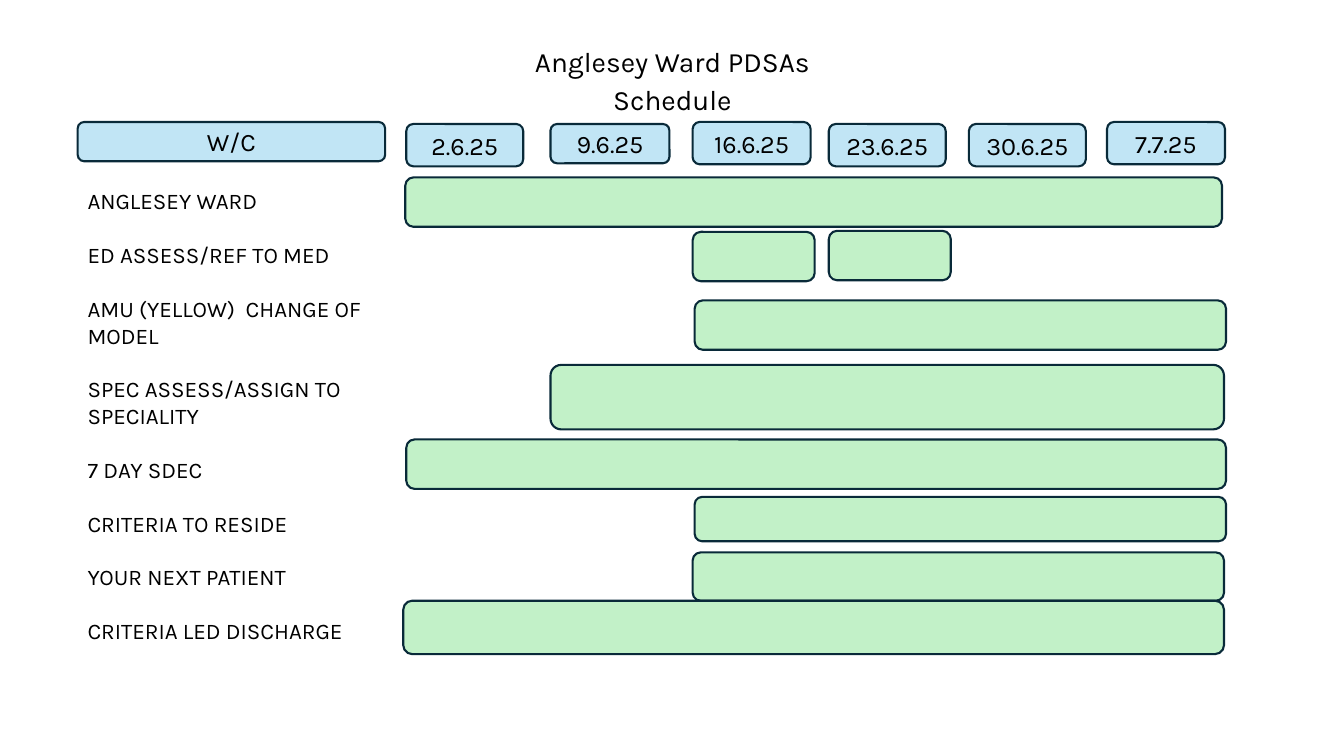
from pptx import Presentation
from pptx.dml.color import RGBColor as Rgb
from pptx.enum.shapes import MSO_SHAPE as Shape
from pptx.enum.text import MSO_ANCHOR as Anchor, PP_ALIGN as Align
from pptx.util import Inches, Pt

COLORS = {"week": "C1E5F5", "bar": "C2F1C8", "line": "092A39", "text": "000000"}

HEADS = [
    ("W/C", 0.77, 1.21, 3.05, 0.39),
    ("2.6.25", 4.03, 1.23, 1.16, 0.42),
    ("9.6.25", 5.46, 1.23, 1.18, 0.39),
    ("16.6.25", 6.87, 1.21, 1.17, 0.42),
    ("23.6.25", 8.22, 1.23, 1.16, 0.42),
    ("30.6.25", 9.61, 1.23, 1.16, 0.42),
    ("7.7.25", 10.98, 1.21, 1.17, 0.42),
]

TASKS = [
    ("ANGLESEY WARD", [(4.02, 1.76, 8.1, 0.49)]),
    ("ED ASSESS/REF TO MED", [(6.87, 2.3, 1.21, 0.49), (8.22, 2.29, 1.21, 0.49)]),
    ("AMU (YELLOW)  CHANGE OF MODEL", [(6.89, 2.98, 5.27, 0.49)]),
    ("SPEC ASSESS/ASSIGN TO SPECIALITY", [(5.46, 3.62, 6.68, 0.64)]),
    ("7 DAY SDEC", [(4.03, 4.36, 8.13, 0.49)]),
    ("CRITERIA TO RESIDE", [(6.89, 4.93, 5.27, 0.44)]),
    ("YOUR NEXT PATIENT", [(6.87, 5.48, 5.27, 0.48)]),
    ("CRITERIA LED DISCHARGE", [(4, 5.96, 8.14, 0.53)]),
]


class Chart:
    font = "Karla"

    def __init__(self, slide):
        self.slide = slide

    def style(self, frame, size, align, anchor):
        frame.word_wrap = True
        frame.vertical_anchor = anchor
        for para in frame.paragraphs:
            para.alignment = align
            for run in para.runs:
                run.font.name = self.font
                run.font.size = Pt(size)
                run.font.color.rgb = Rgb.from_string(COLORS["text"])

    def text(self, words, box, size, align=Align.LEFT, anchor=Anchor.TOP,
             pitch=1.0, before=0, after=0):
        frame = self.slide.shapes.add_textbox(*map(Inches, box)).text_frame
        frame.text = words
        self.style(frame, size, align, anchor)
        for para in frame.paragraphs:
            para.line_spacing = pitch
            para.space_before = Pt(before)
            para.space_after = Pt(after)

    def block(self, box, color, words=""):
        shape = self.slide.shapes.add_shape(Shape.ROUNDED_RECTANGLE, *map(Inches, box))
        shape.shadow.inherit = False
        shape.fill.solid()
        shape.fill.fore_color.rgb = Rgb.from_string(COLORS[color])
        shape.line.color.rgb = Rgb.from_string(COLORS["line"])
        shape.line.width = Pt(1.5)
        if words:
            shape.text_frame.text = words
            self.style(shape.text_frame, 18, Align.CENTER, Anchor.MIDDLE)


def main():
    deck = Presentation()
    deck.slide_width = Inches(13.33)
    deck.slide_height = Inches(7.5)
    chart = Chart(deck.slides.add_slide(deck.slide_layouts[6]))

    chart.text("Anglesey Ward PDSAs", (1.67, 0.39, 10, 0.44), 20,
               Align.CENTER, Anchor.BOTTOM, pitch=0.9)
    chart.text("Schedule", (1.67, 0.83, 10, 0.4), 20,
               Align.CENTER, pitch=0.8, before=10)
    chart.text("\n".join(name for name, _ in TASKS), (0.77, 1.81, 3.06, 4.68), 16,
               after=19.2)

    for name, *box in HEADS:
        chart.block(box, "week", name)
    for _, bars in TASKS:
        for box in bars:
            chart.block(box, "bar")

    deck.save("out.pptx")


if __name__ == "__main__":
    main()
